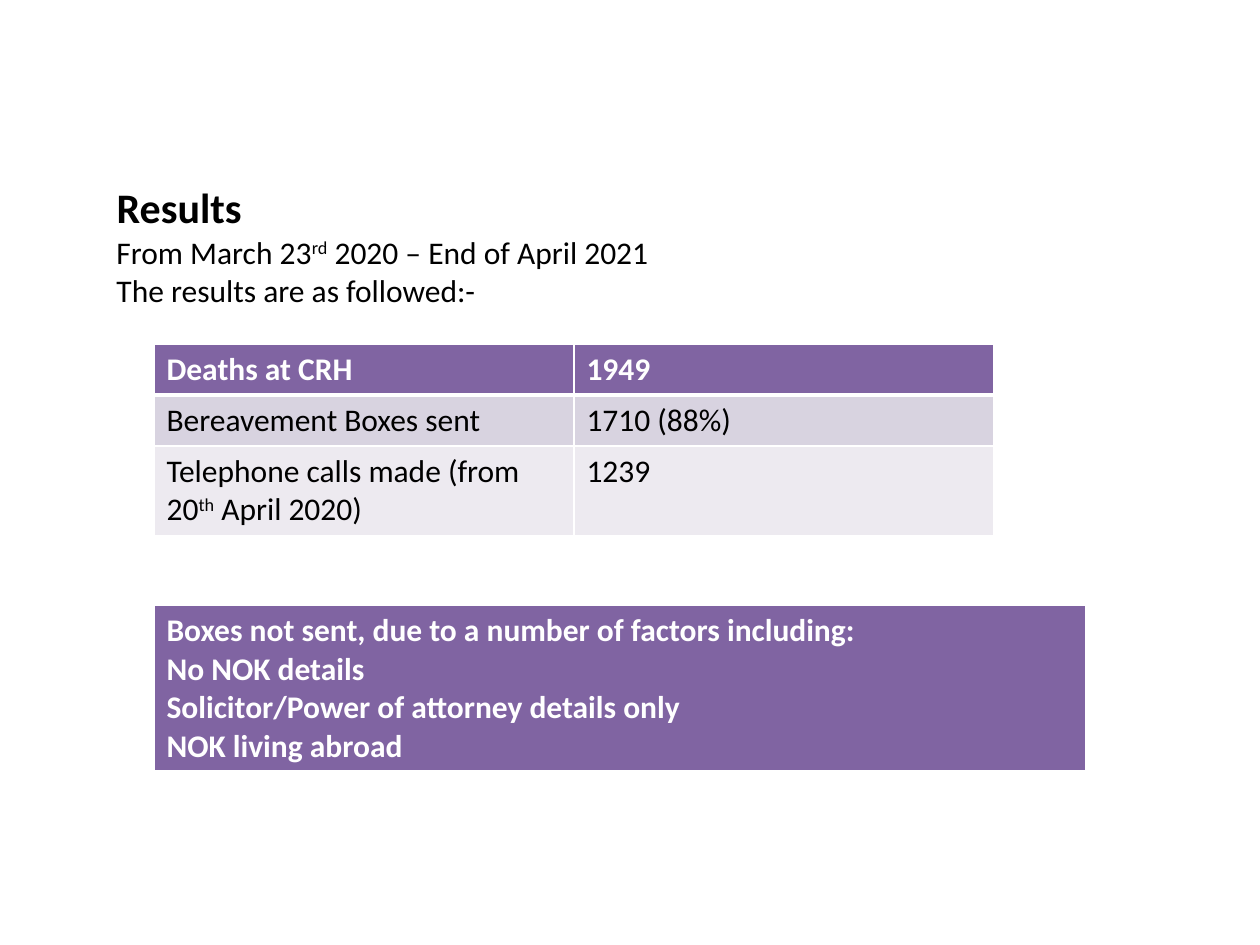
from dataclasses import dataclass

from lxml import etree
from pptx import Presentation
from pptx.dml.color import RGBColor
from pptx.enum import text
from pptx.oxml import ns
from pptx.util import Pt


@dataclass(frozen=True)
class Theme:
    font: str = "Calibri"
    heading_size: int = 24
    body_size: int = 18
    ink: str = "000000"
    white: str = "FFFFFF"
    header_fill: str = "8064A2"
    band_fills: tuple = ("D8D3E0", "EDEAF0")
    rule: float = 1
    header_rule: float = 3


THEME = Theme()
SUPERSCRIPT = "^"  # Marks the start and end of raised letters in the wording

PERIOD = ["From March 23^rd^ 2020 – End of April 2021",
          "The results are as followed:-"]
RESULTS = [
    ["Deaths at CRH", "1949"],
    ["Bereavement Boxes sent", "1710 (88%)"],
    ["Telephone calls made (from 20^th^ April 2020)", "1239"],
]
REASONS = [["Boxes not sent, due to a number of factors including:\n"
            "No NOK details\n"
            "Solicitor/Power of attorney details only\n"
            "NOK living abroad"]]


def write(frame, lines, size, color, bold=False):
    """Fill a text frame, one paragraph per line."""
    look = {"name": THEME.font, "size": Pt(size), "bold": bold}
    for index, line in enumerate(lines):
        paragraph = frame.paragraphs[0] if index == 0 else frame.add_paragraph()
        paragraph.alignment = text.PP_ALIGN.LEFT
        for part, wording in enumerate(line.split(SUPERSCRIPT)):
            run = paragraph.add_run()
            run.text = wording
            for key, value in look.items():
                setattr(run.font, key, value)
            run.font.color.rgb = RGBColor.from_string(color)
            if part % 2:
                run.font._element.set("baseline", "30000")


def set_frame(frame, **changes):
    layout = {"word_wrap": True, "auto_size": text.MSO_AUTO_SIZE.NONE,
              "vertical_anchor": text.MSO_ANCHOR.TOP,
              "margin_left": Pt(7.2), "margin_right": Pt(7.2),
              "margin_top": Pt(0), "margin_bottom": Pt(0), **changes}
    for key, value in layout.items():
        setattr(frame, key, value)


def set_borders(cell, widths):
    """Add white cell borders, in the order the schema asks for."""
    properties = cell._tc.get_or_add_tcPr()
    for index, (side, width) in enumerate(widths.items()):
        line = etree.Element(ns.qn(f"a:ln{side}"), w=str(int(Pt(width))))
        fill = etree.SubElement(line, ns.qn("a:solidFill"))
        etree.SubElement(fill, ns.qn("a:srgbClr"), val=THEME.white)
        properties.insert(index, line)


def add_heading(slide, left, top, width, height):
    """Title, with the reporting period below it."""
    title_height = 33
    title = slide.shapes.title
    title.left, title.top = Pt(left), Pt(top)
    title.width, title.height = Pt(width), Pt(title_height)
    set_frame(title.text_frame, margin_top=Pt(3.6))
    write(title.text_frame, ["Results"], THEME.heading_size, THEME.ink, True)

    period = slide.shapes.add_textbox(Pt(left), Pt(top + title_height),
                                      Pt(width), Pt(height - title_height))
    set_frame(period.text_frame)
    write(period.text_frame, PERIOD, THEME.body_size, THEME.ink)


def add_purple_table(slide, rows, left, top, width, row_height):
    """Table with a purple first row and pale bands below it."""
    table = slide.shapes.add_table(len(rows), len(rows[0]), Pt(left), Pt(top),
                                   Pt(width), Pt(row_height * len(rows))).table
    for row_index, row in enumerate(rows):
        header = row_index == 0
        fill = THEME.header_fill if header else THEME.band_fills[(row_index - 1) % 2]
        borders = {"L": THEME.rule, "R": THEME.rule,
                   "T": THEME.header_rule if row_index == 1 else THEME.rule,
                   "B": THEME.header_rule if header else THEME.rule}
        for column_index, wording in enumerate(row):
            cell = table.cell(row_index, column_index)
            cell.fill.solid()
            cell.fill.fore_color.rgb = RGBColor.from_string(fill)
            set_borders(cell, borders)
            write(cell.text_frame, wording.split("\n"), THEME.body_size,
                  THEME.white if header else THEME.ink, header)


def main():
    deck = Presentation()
    deck.slide_width, deck.slide_height = Pt(720), Pt(540)
    slide = deck.slides.add_slide(deck.slide_layouts[5])

    table_left = 88
    add_heading(slide, 59.5, 100, 584, 80)
    add_purple_table(slide, RESULTS, table_left, 196.5, 480, 29.2)
    add_purple_table(slide, REASONS, table_left, 346, 532.5, 93.6)
    deck.save("out.pptx")


if __name__ == "__main__":
    main()
